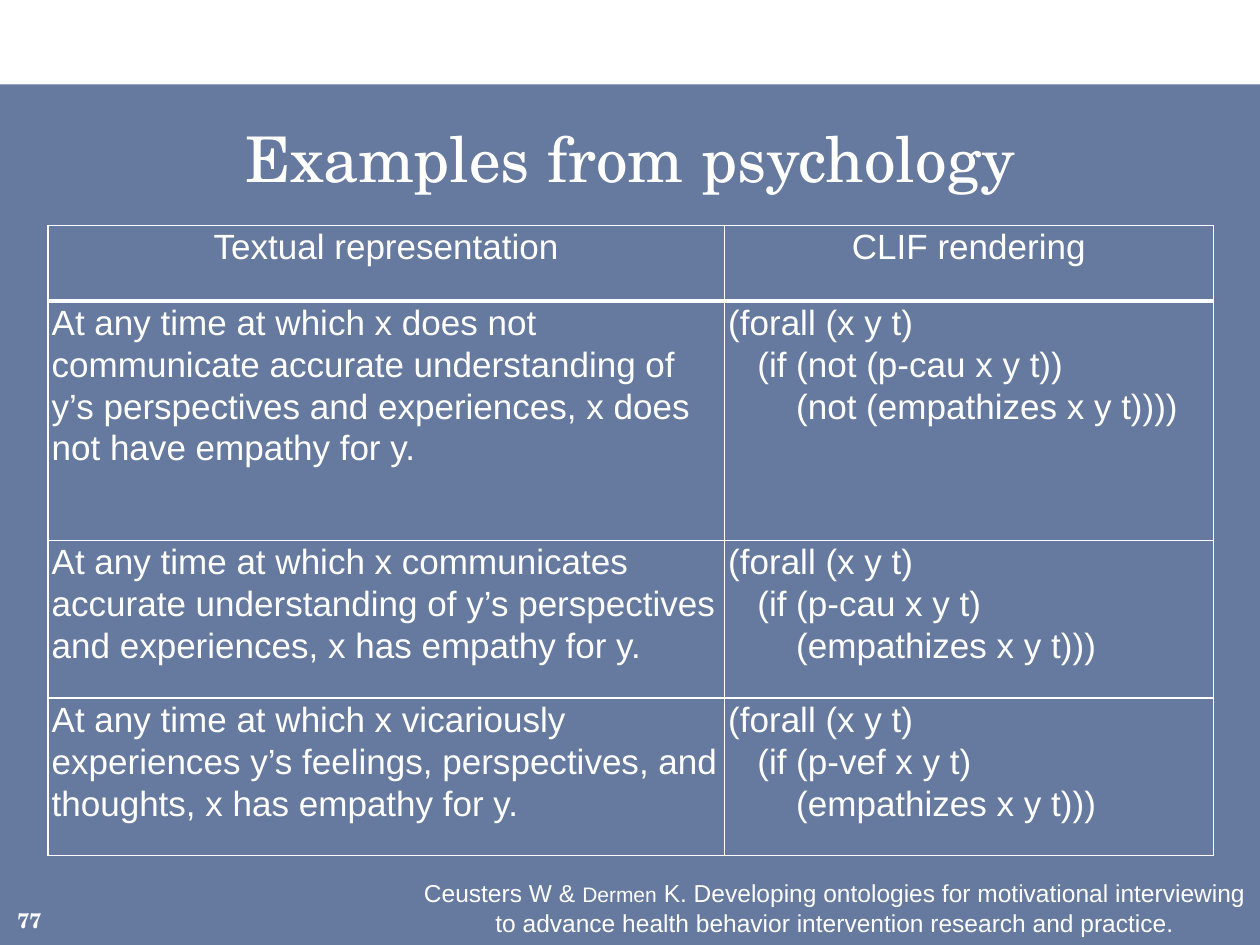
import pptx
import pptx.util
import pptx.dml.color
import pptx.enum.shapes
import pptx.enum.text
import pptx.oxml
import pptx.oxml.ns
from lxml import etree

Inches = pptx.util.Inches
Pt = pptx.util.Pt
qn = pptx.oxml.ns.qn
ALIGN = pptx.enum.text.PP_ALIGN
ANCHOR = pptx.enum.text.MSO_ANCHOR

WHITE = pptx.dml.color.RGBColor(0xFF, 0xFF, 0xFF)
NAVY = pptx.dml.color.RGBColor(0x00, 0x20, 0x60)
SERIF = "TeX Gyre Schola"
SANS = "Arial"
WIDTH, HEIGHT = 10, 7.5

COLUMNS = [5.37, 3.88]
ROWS = [0.6, 1.9, 1.25, 1.25]
CELLS = [
    ("Textual representation", "CLIF rendering"),
    ("At any time at which x does not communicate accurate understanding of "
     "y’s perspectives and experiences, x does not have empathy for y.",
     "(forall (x y t)\n   (if (not (p-cau x y t))\n       (not (empathizes x y t))))"),
    ("At any time at which x communicates accurate understanding of "
     "y’s perspectives and experiences, x has empathy for y.",
     "(forall (x y t)\v   (if (p-cau x y t)\n       (empathizes x y t)))"),
    ("At any time at which x vicariously experiences y’s feelings, "
     "perspectives, and thoughts, x has empathy for y.",
     "(forall (x y t)\v   (if (p-vef x y t)\n       (empathizes x y t)))"),
]
CITATION = [
    ("Ceusters W & ", 14),
    ("Dermen", 12),
    (" K. Developing ontologies for motivational interviewing to advance "
     "health behavior intervention research and practice.", 14),
]


def style(p, font, size, align):
    p.alignment = align
    p.font.name = font
    p.font.size = Pt(size)
    p.font.color.rgb = WHITE


def add_band(s, box):
    sp = s.shapes.add_shape(pptx.enum.shapes.MSO_SHAPE.RECTANGLE, *map(Inches, box))
    sp.shadow.inherit = False
    sp.fill.solid()
    sp.fill.fore_color.rgb = NAVY
    sp.line.fill.background()
    clr = sp.element.spPr.find(".//" + qn("a:srgbClr"))
    etree.SubElement(clr, qn("a:alpha"), val="60000")
    s.shapes.title.element.addprevious(sp.element)


def add_title(s, box):
    sp = s.shapes.title
    sp.left, sp.top, sp.width, sp.height = map(Inches, box)
    tf = sp.text_frame
    tf.text = "Examples from psychology"
    tf.vertical_anchor = ANCHOR.MIDDLE
    style(tf.paragraphs[0], SERIF, 36, ALIGN.CENTER)


def set_borders(cell, widths):
    tcPr = cell._tc.get_or_add_tcPr()
    for i, (side, width) in enumerate(widths.items()):
        ln = etree.Element(qn("a:ln" + side), w=str(Pt(width)))
        fill = etree.SubElement(ln, qn("a:solidFill"))
        etree.SubElement(fill, qn("a:srgbClr"), val=str(WHITE))
        tcPr.insert(i, ln)


def add_examples(s, box):
    table = s.shapes.add_table(len(ROWS), len(COLUMNS), *map(Inches, box)).table
    for column, width in zip(table.columns, COLUMNS):
        column.width = Inches(width)
    for i, (row, height) in enumerate(zip(table.rows, ROWS)):
        row.height = Inches(height)
        for cell, text in zip(row.cells, CELLS[i]):
            cell.fill.background()
            cell.margin_left = cell.margin_right = Inches(0.03)
            cell.margin_top = cell.margin_bottom = 0
            cell.text = text
            for p in cell.text_frame.paragraphs:
                style(p, SANS, 20, ALIGN.LEFT if i else ALIGN.CENTER)
                p.font.bold = False
                p.line_spacing = 1.07
            set_borders(cell, {"L": 1, "R": 1, "T": 3 if i == 1 else 1,
                               "B": 1 if i else 3})


def add_page_number(s, box):
    tf = s.shapes.add_textbox(*map(Inches, box)).text_frame
    tf.margin_left = tf.margin_right = tf.margin_top = tf.margin_bottom = 0
    tf.word_wrap = True
    tf.vertical_anchor = ANCHOR.BOTTOM
    tf.text = "77"
    style(tf.paragraphs[0], SERIF, 12, ALIGN.RIGHT)
    tf.paragraphs[0].font.bold = True


def add_citation(s, box):
    tf = s.shapes.add_textbox(*map(Inches, box)).text_frame
    tf.word_wrap = True
    tf.auto_size = pptx.enum.text.MSO_AUTO_SIZE.SHAPE_TO_FIT_TEXT
    p = tf.paragraphs[0]
    style(p, SANS, 14, ALIGN.CENTER)
    for text, size in CITATION:
        r = p.add_run()
        r.text = text
        r.font.size = Pt(size)


def main():
    prs = pptx.Presentation()
    prs.slide_width, prs.slide_height = Inches(WIDTH), Inches(HEIGHT)
    s = prs.slides.add_slide(prs.slide_layouts[5])
    add_band(s, (0, 0.67, WIDTH, HEIGHT - 0.67))
    add_title(s, (0.25, 0.83, WIDTH - 0.5, 0.83))
    add_examples(s, (0.38, 1.79, sum(COLUMNS), sum(ROWS)))
    add_page_number(s, (0, 7.08, 0.33, 0.32))
    add_citation(s, (3.25, 6.92, WIDTH - 3.25, 0.57))
    prs.save("out.pptx")


if __name__ == "__main__":
    main()
